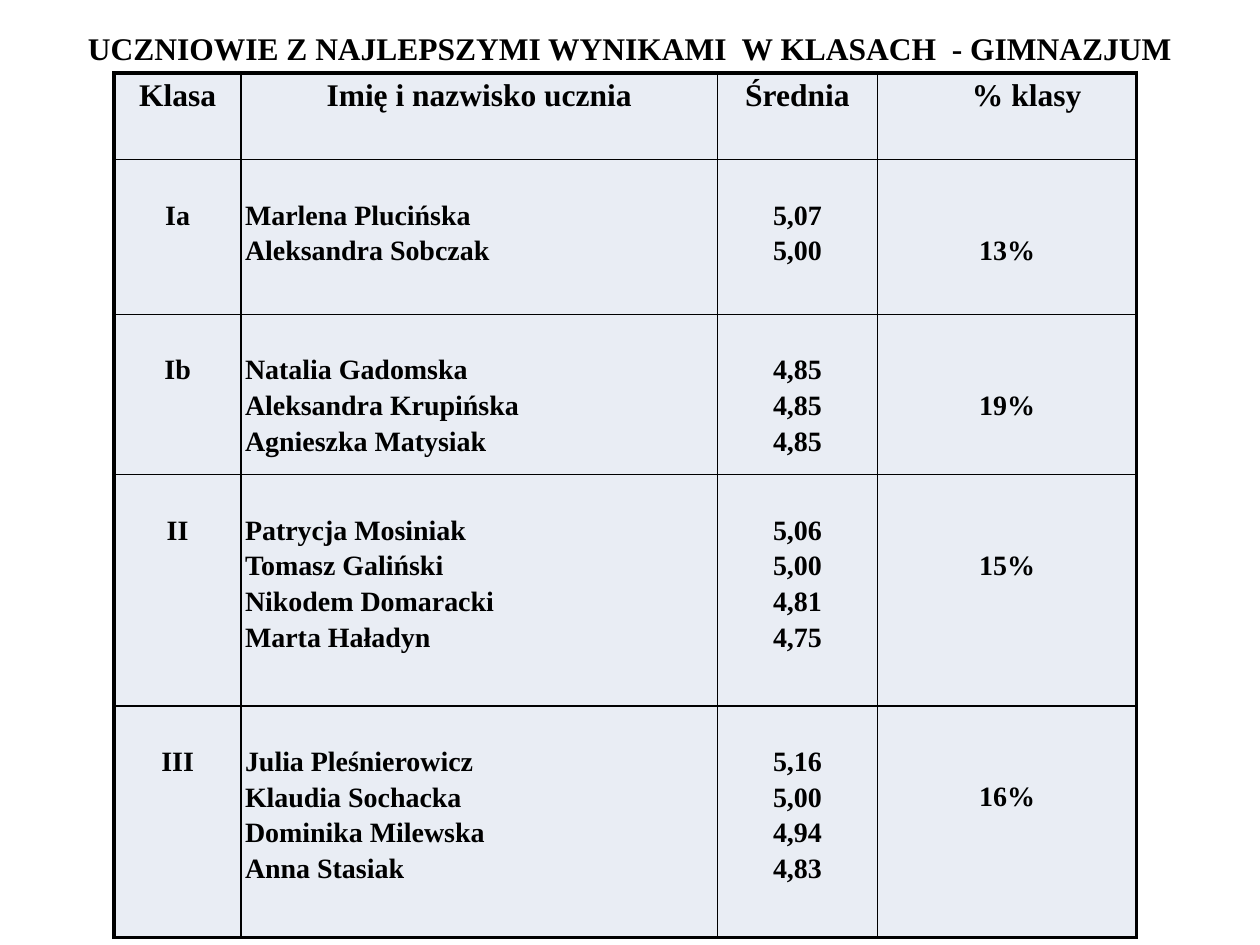
from lxml.etree import SubElement
from pptx import Presentation
from pptx.dml.color import RGBColor
from pptx.enum.text import MSO_AUTO_SIZE, PP_ALIGN
from pptx.oxml.ns import qn
from pptx.util import Cm, Pt

FONT = "Times New Roman"
INK = "000000"
CELL_FILL = "E9EDF4"
LINE_HEIGHT = 0.72
SIDE_MARGIN = 0.08
COLUMN_WIDTHS = [2.56, 9.6, 3.23, 5.22]
ROW_HEIGHTS = [1.75, 3.12, 3.23, 4.66, 4.67]
HEADINGS = ["Klasa", "Imię i nazwisko ucznia", "Średnia", "% klasy"]
CLASSES = [
    ("Ia", "13%", [("Marlena Plucińska", "5,07"), ("Aleksandra Sobczak", "5,00")]),
    ("Ib", "19%", [("Natalia Gadomska", "4,85"), ("Aleksandra Krupińska", "4,85"),
                   ("Agnieszka Matysiak", "4,85")]),
    ("II", "15%", [("Patrycja Mosiniak", "5,06"), ("Tomasz Galiński", "5,00"),
                   ("Nikodem Domaracki", "4,81"), ("Marta Haładyn", "4,75")]),
    ("III", "16%", [("Julia Pleśnierowicz", "5,16"), ("Klaudia Sochacka", "5,00"),
                    ("Dominika Milewska", "4,94"), ("Anna Stasiak", "4,83")]),
]


def color(value):
    """Return the colour for a hex string."""
    return RGBColor.from_string(value)


def write_lines(frame, lines, size, spacing, align=PP_ALIGN.CENTER):
    """Write each line as a bold paragraph."""
    frame.text = "\n".join(lines)
    for paragraph in frame.paragraphs:
        paragraph.alignment = align
        paragraph.line_spacing = spacing
        paragraph.font.name = FONT
        paragraph.font.size = Pt(size)
        paragraph.font.bold = True
        paragraph.font.color.rgb = color(INK)


def add_border(cell, side, width):
    """Draw one side of a cell."""
    line = SubElement(cell._tc.get_or_add_tcPr(), qn(f"a:ln{side}"), w=str(Pt(width)))
    fill = SubElement(line, qn("a:solidFill"))
    SubElement(fill, qn("a:srgbClr"), val=INK)


def style_cell(cell, outer_sides):
    """Give a cell its margins, borders and fill."""
    cell.margin_left = cell.margin_right = Cm(SIDE_MARGIN)
    cell.margin_top = cell.margin_bottom = 0
    for side in "LRTB":
        add_border(cell, side, 2.25 if side in outer_sides else 1)
    cell.fill.solid()
    cell.fill.fore_color.rgb = color(CELL_FILL)


def add_title(slide, left, top, width, height):
    """Place the slide title in the given box."""
    title = slide.shapes.add_textbox(Cm(left), Cm(top), Cm(width), Cm(height))
    frame = title.text_frame
    frame.word_wrap = True
    frame.auto_size = MSO_AUTO_SIZE.SHAPE_TO_FIT_TEXT
    write_lines(frame, ["UCZNIOWIE Z NAJLEPSZYMI WYNIKAMI  W KLASACH  - GIMNAZJUM"], 18, 1.5)


def add_results(slide, left, top):
    """Place the table of best pupils at the given corner."""
    row_count, column_count = len(ROW_HEIGHTS), len(COLUMN_WIDTHS)
    results = slide.shapes.add_table(
        row_count, column_count, Cm(left), Cm(top),
        Cm(sum(COLUMN_WIDTHS)), Cm(sum(ROW_HEIGHTS))).table
    results.first_row = results.horz_banding = False
    for column, width in zip(results.columns, COLUMN_WIDTHS):
        column.width = Cm(width)
    for row, height in zip(results.rows, ROW_HEIGHTS):
        row.height = Cm(height)

    for r in range(row_count):
        for c in range(column_count):
            edges = {"L": c == 0, "R": c == column_count - 1,
                     "T": r == 0, "B": r == row_count - 1}
            style_cell(results.cell(r, c), [side for side in edges if edges[side]])

    for c, heading in enumerate(HEADINGS):
        write_lines(results.cell(0, c).text_frame, [heading], 18, 1.15)
    results.cell(0, column_count - 1).margin_left = Cm(SIDE_MARGIN + 0.79)

    for r, (class_name, share, pupils) in enumerate(CLASSES, 1):
        names, averages = zip(*pupils)
        for c, lines in enumerate([[class_name], names, averages, [share]]):
            cell = results.cell(r, c)
            cell.margin_top = Cm(LINE_HEIGHT * (2 if c == 3 else 1))
            align = PP_ALIGN.LEFT if c == 1 else PP_ALIGN.CENTER
            write_lines(cell.text_frame, lines, 16, 1.15, align)


def main():
    """Build and save the slide."""
    deck = Presentation()
    deck.slide_width, deck.slide_height = Cm(25.4), Cm(19.05)
    slide = deck.slides.add_slide(deck.slide_layouts[6])
    add_title(slide, 1, 0.08, 23.4, 1.42)
    add_results(slide, 2.3, 1.47)
    deck.save("out.pptx")


if __name__ == "__main__":
    main()
